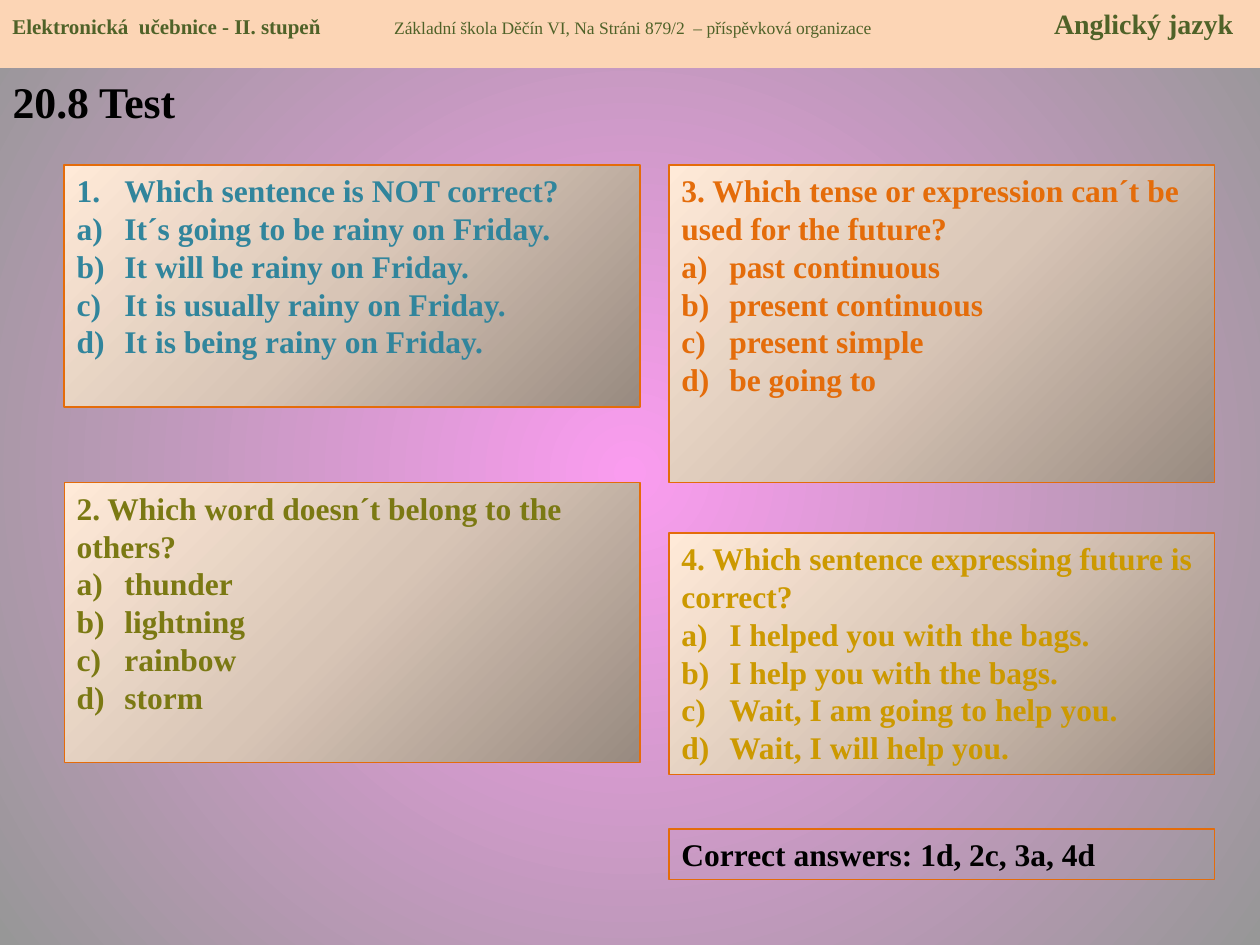
from lxml.etree import SubElement
from pptx import Presentation
from pptx.dml.color import RGBColor
from pptx.enum.shapes import MSO_SHAPE
from pptx.enum.text import MSO_ANCHOR, PP_ALIGN
from pptx.oxml.ns import qn
from pptx.util import Inches, Pt

FONT = "Times New Roman"
HEX = {
    "peach": "FCD5B5", "green": "4F6228", "black": "000000", "orange": "E46C0A",
    "teal": "31859C", "olive": "7B7913", "gold": "CC9900",
}
PINK = [(0, "FA9CEF"), (100, "979797")]
SAND = [(0, "988A80"), (50, "D8C5B6"), (100, "FFEAD8")]


def shade(root, stops, focus):
    """Turn the first gradient under root into a circular one around focus."""
    grad = root.find(".//" + qn("a:gradFill"))
    for child in list(grad):
        grad.remove(child)
    listing = SubElement(grad, qn("a:gsLst"))
    for pos, color in stops:
        stop = SubElement(listing, qn("a:gs"), pos=str(pos * 1000))
        SubElement(stop, qn("a:srgbClr"), val=color)
    circle = SubElement(grad, qn("a:path"), path="circle")
    SubElement(circle, qn("a:fillToRect"),
               {side: str(pct * 1000) for side, pct in zip("ltrb", focus)})


def write(para, text, size, color, bold=True):
    run = para.add_run()
    run.text = text
    look = {"name": FONT, "size": Pt(size), "bold": bold}
    for key, value in look.items():
        setattr(run.font, key, value)
    run.font.color.rgb = RGBColor.from_string(HEX[color])


deck = Presentation()
deck.slide_width, deck.slide_height = Inches(10), Inches(7.5)
slide = deck.slides.add_slide(deck.slide_layouts[5])
slide.background.fill.gradient()
shade(slide._element, PINK, (50, 50, 50, 50))

# Title
title = slide.shapes.title
place = {"left": 0, "top": 0.54, "width": 10, "height": 6.96}
for key, value in place.items():
    setattr(title, key, Inches(value))
title.text_frame.vertical_anchor = MSO_ANCHOR.TOP
para = title.text_frame.paragraphs[0]
para.alignment = PP_ALIGN.LEFT
write(para, "20.8 Test", 25, "black")

# Header band, with tab stops for the middle and right texts
band = slide.shapes.add_shape(MSO_SHAPE.RECTANGLE, 0, 0, Inches(10), Inches(0.54))
band.shadow.inherit = False
band.fill.solid()
band.fill.fore_color.rgb = RGBColor.from_string(HEX["peach"])
band.line.fill.background()
band.text_frame.vertical_anchor = MSO_ANCHOR.TOP
para = band.text_frame.paragraphs[0]
para.alignment = PP_ALIGN.LEFT
tabs = SubElement(para._p.get_or_add_pPr(), qn("a:tabLst"))
for pos, algn in [(3.03, "l"), (9.69, "r")]:
    SubElement(tabs, qn("a:tab"), pos=str(Inches(pos)), algn=algn)
write(para, "Elektronická  učebnice - II. stupeň\t", 12, "green")
write(para, "Základní škola Děčín VI, Na Stráni 879/2  – příspěvková organizace\t",
      10, "green", False)
write(para, "Anglický jazyk", 16, "green")

# Question boxes: place, line width, colour, question, answers
LEFT, RIGHT = (0.51, 4.57), (5.31, 4.33)
boxes = [
    (LEFT, 1.31, 1.92, 1, "teal", "Which sentence is NOT correct?",
     ["It´s going to be rainy on Friday.", "It will be rainy on Friday.",
      "It is usually rainy on Friday.", "It is being rainy on Friday."]),
    (LEFT, 3.83, 2.22, 0.75, "olive", "2. Which word doesn´t belong to the others?",
     ["thunder", "lightning", "rainbow", "storm"]),
    (RIGHT, 1.31, 2.52, 0.75, "orange",
     "3. Which tense or expression can´t be used for the future?",
     ["past continuous", "present continuous", "present simple", "be going to"]),
    (RIGHT, 4.23, 1.92, 0.75, "gold", "4. Which sentence expressing future is correct?",
     ["I helped you with the bags.", "I help you with the bags.",
      "Wait, I am going to help you.", "Wait, I will help you."]),
    (RIGHT, 6.58, 0.4, 0.75, "black", "Correct answers: 1d, 2c, 3a, 4d", []),
]
for (left, width), top, height, weight, color, ask, answers in boxes:
    box = slide.shapes.add_shape(MSO_SHAPE.RECTANGLE, Inches(left), Inches(top),
                                 Inches(width), Inches(height))
    box.shadow.inherit = False
    if answers:
        box.fill.gradient()
        shade(box._element, SAND, (100, 100, 0, 0))
    else:
        box.fill.background()
    box.line.color.rgb = RGBColor.from_string(HEX["orange"])
    box.line.width = Pt(weight)
    frame = box.text_frame
    frame.word_wrap = True
    frame.vertical_anchor = MSO_ANCHOR.TOP
    for num, text in enumerate([ask] + answers):
        para = frame.add_paragraph() if num else frame.paragraphs[0]
        para.alignment = PP_ALIGN.LEFT
        style = "alphaLcParenR" if num else "arabicPeriod"
        if num or not ask[0].isdigit() and answers:
            props = para._p.get_or_add_pPr()
            props.set("marL", str(Inches(0.38)))
            props.set("indent", str(-Inches(0.38)))
            SubElement(props, qn("a:buFont"), typeface="+mj-lt")
            SubElement(props, qn("a:buAutoNum"), type=style)
        write(para, text, 18, color)

deck.save("out.pptx")
